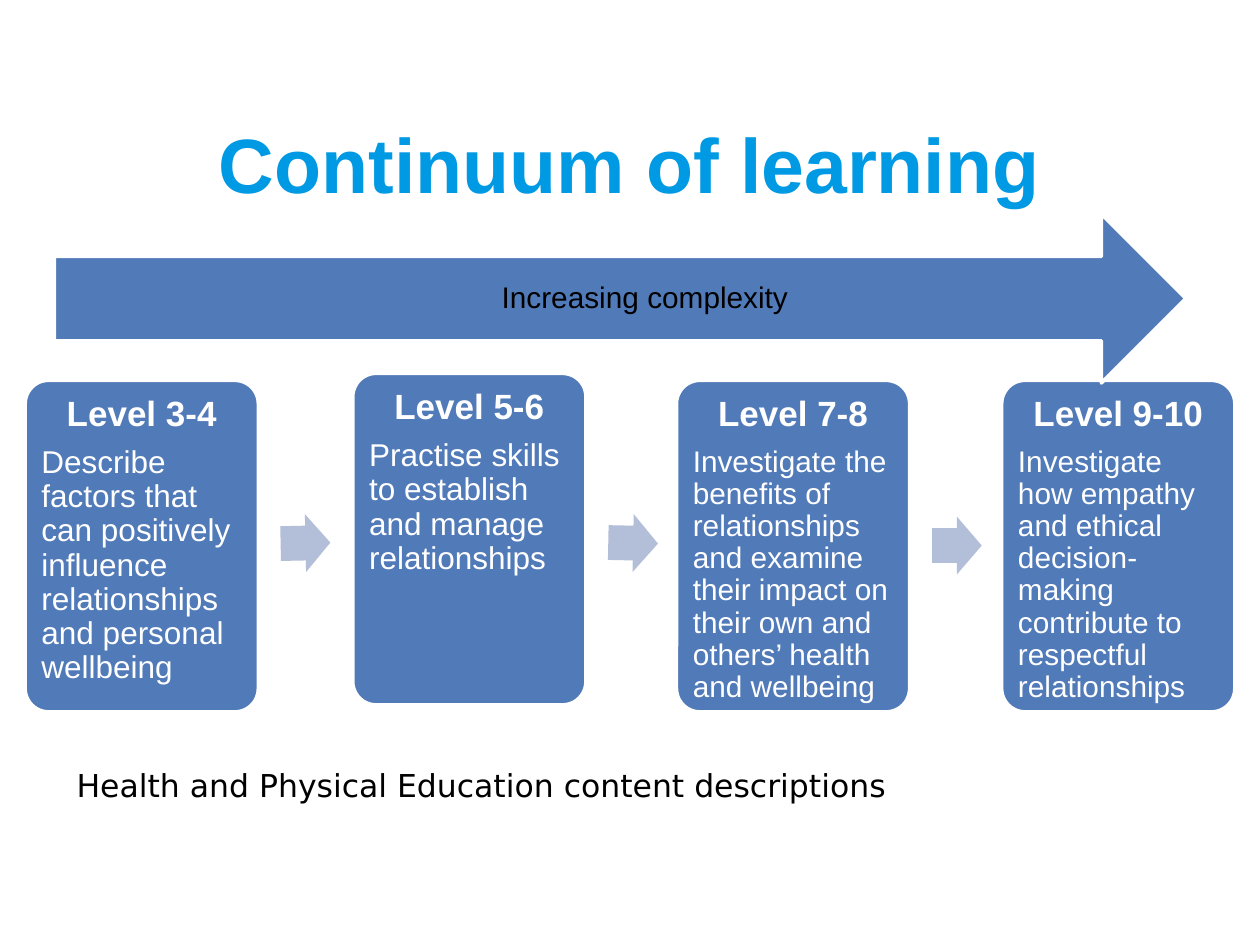
from pptx import Presentation
from pptx.dml.color import RGBColor
from pptx.enum.shapes import MSO_SHAPE as Kind
from pptx.enum.text import MSO_ANCHOR as Anchor, PP_ALIGN as Align
from pptx.util import Pt

COLORS = {
    "title": "0099E3",
    "card": "517AB8",
    "step": "B3BED8",
    "white": "FFFFFF",
    "black": "000000",
}

# left, top, heading, body, body size
CARDS = [
    (14.4, 217.4, "Level 3-4",
     "Describe factors that can positively influence relationships "
     "and personal wellbeing", 18),
    (201.6, 213.4, "Level 5-6",
     "Practise skills to establish and manage relationships", 18),
    (386.6, 217.4, "Level 7-8",
     "Investigate the benefits of relationships and examine their impact "
     "on their own and others’ health and wellbeing", 17),
    (572.4, 217.4, "Level 9-10",
     "Investigate how empathy and ethical decision-making contribute "
     "to respectful relationships", 17),
]
# top, turn
STEPS = [(293.8, -1.2), (293.8, 1.2), (295.2, 0)]


class Painter:
    def __init__(self, slide, face="Arial"):
        self.slide = slide
        self.face = face

    def color(self, name):
        return RGBColor.from_string(COLORS[name])

    def shape(self, kind, box, fill, line=None, adjust=()):
        item = self.slide.shapes.add_shape(kind, *map(Pt, box))
        item.shadow.inherit = False
        item.fill.solid()
        item.fill.fore_color.rgb = self.color(fill)
        if line:
            item.line.color.rgb = self.color(line)
            item.line.width = Pt(2)
        else:
            item.line.fill.background()
        for index, value in enumerate(adjust):
            item.adjustments[index] = value
        return item

    def frame(self, item, anchor, pads):
        """Set anchor and the left, top, right and bottom insets."""
        frame = item.text_frame
        frame.word_wrap = True
        frame.vertical_anchor = anchor
        (frame.margin_left, frame.margin_top,
         frame.margin_right, frame.margin_bottom) = map(Pt, pads)
        return frame

    def style(self, para, text, size, color, bold=False, align=Align.LEFT,
              face=None):
        para.text = text
        para.alignment = align
        font = para.font
        font.name = face or self.face
        font.size = Pt(size)
        font.bold = bold
        font.color.rgb = self.color(color)

    def label(self, box, anchor, *args, **style):
        item = self.slide.shapes.add_textbox(*map(Pt, box))
        frame = self.frame(item, anchor, (7.2, 3.6, 7.2, 3.6))
        self.style(frame.paragraphs[0], *args, **style)

    def card(self, left, top, head, body, size):
        item = self.shape(Kind.ROUNDED_RECTANGLE, (left, top, 133.2, 189.4),
                          "card", "white", [0.1])
        frame = self.frame(item, Anchor.TOP, [5.4] * 4)
        first, second = frame.paragraphs[0], frame.add_paragraph()
        self.style(first, head, 20, "white", True, Align.CENTER)
        self.style(second, body, size, "white")
        for para in (first, second):
            para.line_spacing = 0.9
        first.space_after = Pt(7)

    def step(self, left, top, turn):
        item = self.shape(Kind.RIGHT_ARROW, (left, top, 28.4, 33.1),
                          "step", adjust=[0.6, 0.5])
        item.rotation = turn

    def banner(self, box, text):
        item = self.shape(Kind.RIGHT_ARROW, box, "card", "white")
        frame = self.frame(item, Anchor.MIDDLE, (52.6, 13.7, 0, 13.7))
        para = frame.paragraphs[0]
        self.style(para, text, 17, "black", align=Align.CENTER)
        para.line_spacing = 0.9


def main():
    deck = Presentation()
    deck.slide_width, deck.slide_height = Pt(720), Pt(540)
    paint = Painter(deck.slides.add_slide(deck.slide_layouts[6]))

    paint.label((54, 48.2, 612, 90), Anchor.MIDDLE, "Continuum of learning",
                44, "title", bold=True, align=Align.CENTER)
    for card in CARDS:
        paint.card(*card)
    for card, (top, turn) in zip(CARDS, STEPS):
        paint.step(card[0] + 146, top, turn)
    paint.banner((31, 122.4, 646.6, 96.5), "Increasing complexity")
    paint.label((36.7, 434.2, 487.4, 28.8), Anchor.TOP,
                "Health and Physical Education content descriptions",
                18, "black", face="DejaVu Sans")
    deck.save("out.pptx")


if __name__ == "__main__":
    main()
